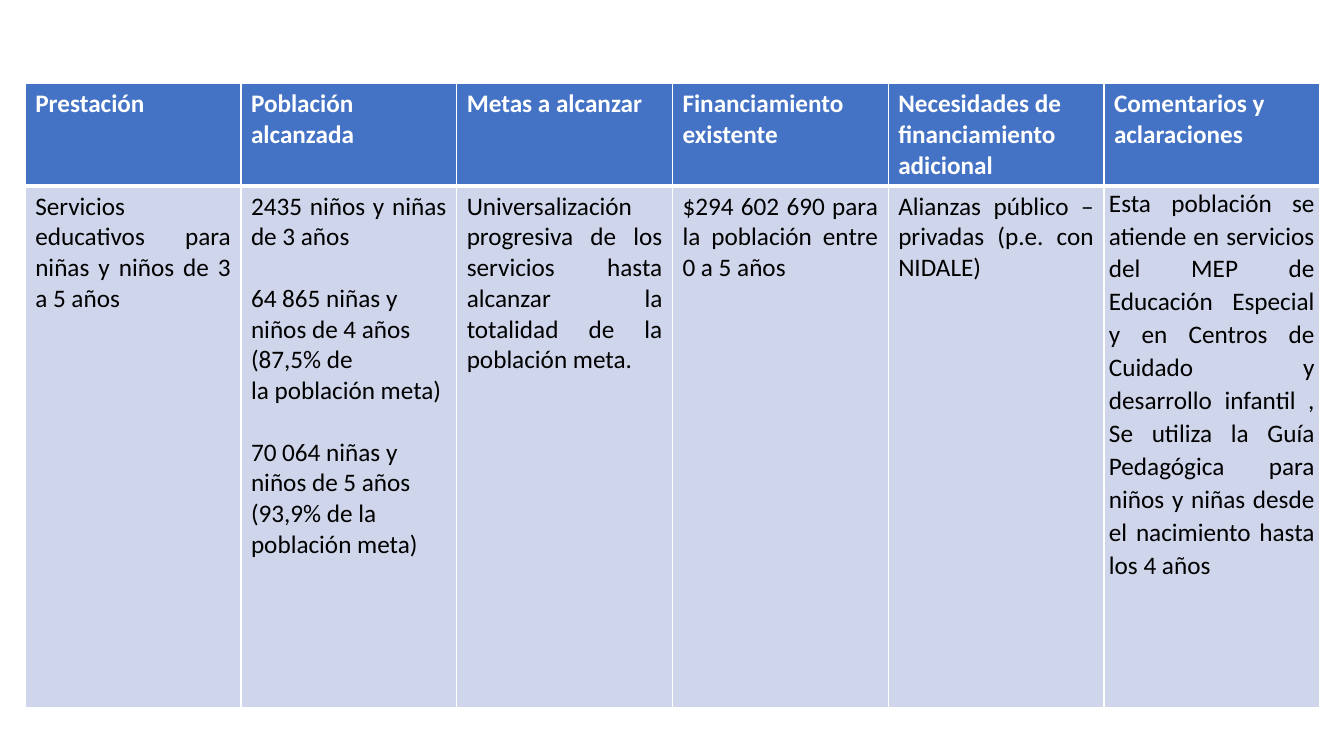
from dataclasses import dataclass
from typing import Optional

from lxml.etree import SubElement
from pptx import Presentation
from pptx.dml.color import RGBColor
from pptx.enum.text import PP_ALIGN as Align
from pptx.oxml.ns import qn
from pptx.table import _Cell as Cell
from pptx.util import Inches, Pt

WHITE = RGBColor(0xFF, 0xFF, 0xFF)
BLACK = RGBColor(0x00, 0x00, 0x00)
BLUE = RGBColor(0x44, 0x72, 0xC4)
PALE_BLUE = RGBColor(0xCF, 0xD5, 0xEA)
FONT = "Calibri"
COLUMN_WIDTH = 2.14
ROW_HEIGHTS = (0.94, 5.17)


@dataclass
class Para:
    text: str
    align: Align = Align.JUSTIFY
    before: float = 0
    after: float = 0
    spacing: Optional[float] = None


@dataclass
class Column:
    heading: str
    body: list[Para]
    tight: bool = False


COLUMNS = [
    Column("Prestación", [Para("Servicios educativos para niñas y niños de 3 a 5 años")]),
    Column("Población alcanzada", [
        Para("2435 niños y niñas de 3 años"),
        Para("64 865 niñas y niños de 4 años (87,5% de", Align.LEFT, before=22),
        Para("la población meta)", Align.LEFT),
        Para("70 064 niñas y niños de 5 años (93,9% de la población meta)",
             Align.LEFT, before=22),
    ]),
    Column("Metas a alcanzar", [
        Para("Universalización progresiva de los servicios hasta alcanzar "
             "la totalidad de la población meta."),
    ]),
    Column("Financiamiento existente", [
        Para("$294 602 690 para la población entre 0 a 5 años"),
    ]),
    Column("Necesidades de financiamiento adicional", [
        Para("Alianzas público – privadas (p.e. con NIDALE)"),
    ]),
    Column("Comentarios y aclaraciones", [
        Para("Esta población se atiende en servicios del MEP de Educación Especial "
             "y en Centros de Cuidado y desarrollo infantil , Se utiliza la Guía "
             "Pedagógica para niños y niñas desde el nacimiento hasta los 4 años",
             after=8, spacing=1.07),
    ], tight=True),
]


def set_borders(cell: Cell, top: float, bottom: float) -> None:
    tc_pr = cell._tc.get_or_add_tcPr()
    widths = {"a:lnL": 1, "a:lnR": 1, "a:lnT": top, "a:lnB": bottom}
    for i, (tag, width) in enumerate(widths.items()):
        ln = SubElement(tc_pr, qn(tag), w=str(Pt(width)))
        fill = SubElement(ln, qn("a:solidFill"))
        SubElement(fill, qn("a:srgbClr"), val=str(WHITE))
        tc_pr.insert(i, ln)


def fill_cell(cell: Cell, paras: list[Para], fill: RGBColor, color: RGBColor,
              bold: bool) -> None:
    cell.fill.solid()
    cell.fill.fore_color.rgb = fill
    tf = cell.text_frame
    for i, para in enumerate(paras):
        p = tf.add_paragraph() if i else tf.paragraphs[0]
        p.alignment = para.align
        p.space_before = Pt(para.before)
        p.space_after = Pt(para.after)
        p.line_spacing = para.spacing
        r = p.add_run()
        r.text = para.text
        r.font.name = FONT
        r.font.size = Pt(18)
        r.font.bold = bold
        r.font.color.rgb = color


def main() -> None:
    prs = Presentation()
    prs.slide_width = Inches(13.33)
    prs.slide_height = Inches(7.5)
    s = prs.slides.add_slide(prs.slide_layouts[6])
    table = s.shapes.add_table(
        len(ROW_HEIGHTS), len(COLUMNS), Inches(0.25), Inches(0.83),
        Inches(COLUMN_WIDTH * len(COLUMNS)), Inches(sum(ROW_HEIGHTS))).table
    for row, height in zip(table.rows, ROW_HEIGHTS):
        row.height = Inches(height)
    for i, column in enumerate(COLUMNS):
        table.columns[i].width = Inches(COLUMN_WIDTH)
        head, body = table.cell(0, i), table.cell(1, i)
        fill_cell(head, [Para(column.heading, Align.LEFT)], BLUE, WHITE, True)
        fill_cell(body, column.body, PALE_BLUE, BLACK, False)
        set_borders(head, top=1, bottom=3)
        set_borders(body, top=3, bottom=1)
        if column.tight:
            body.margin_left = body.margin_right = Inches(0.05)
            body.margin_top = body.margin_bottom = Inches(0)
    prs.save("out.pptx")


if __name__ == "__main__":
    main()
